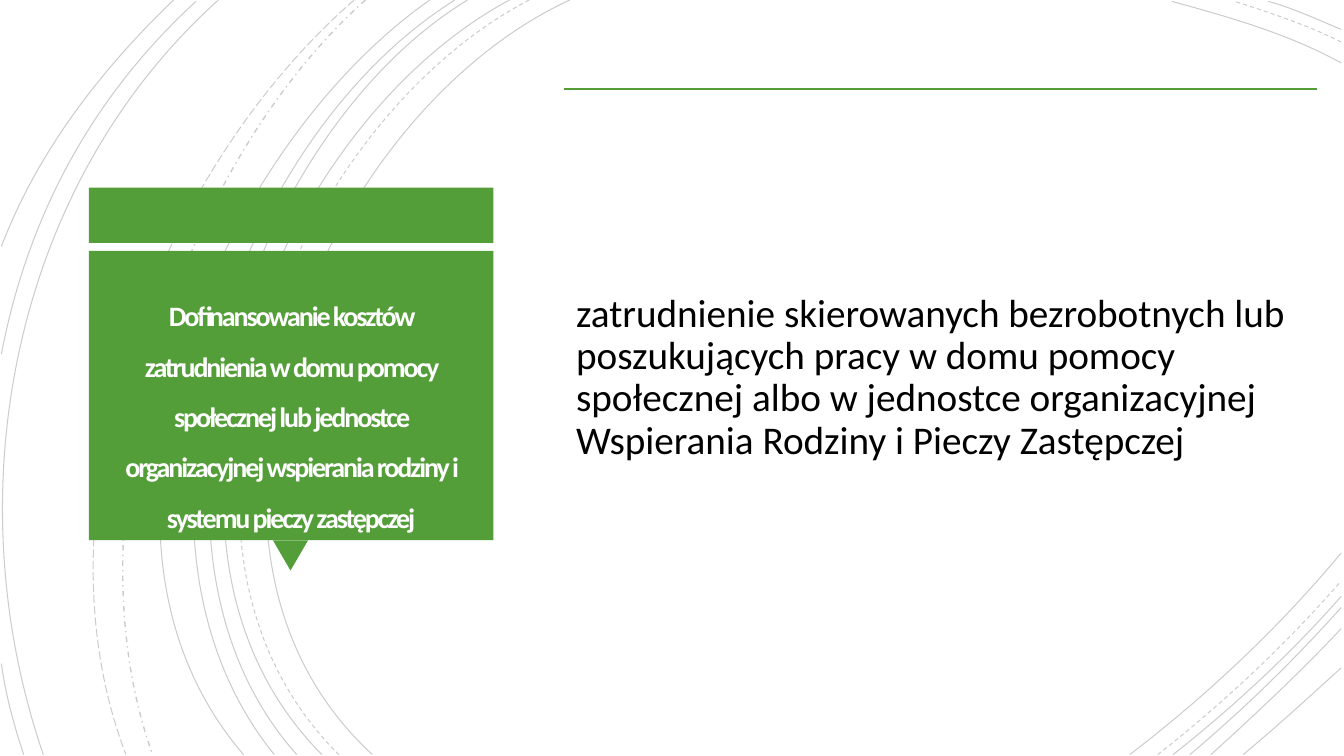
from lxml import etree
from pptx import Presentation
from pptx.dml.color import RGBColor
from pptx.enum import dml, shapes, text
from pptx.oxml.ns import qn
from pptx.util import Pt

HEX = {"green": "549E39", "white": "FFFEFF", "black": "000000"}
FONT = "Calibri"
TITLE = ("Dofinansowanie kosztów zatrudnienia w domu pomocy społecznej lub jednostce "
         "organizacyjnej wspierania rodziny i systemu pieczy zastępczej")
BODY = ("zatrudnienie skierowanych bezrobotnych lub poszukujących pracy w domu pomocy "
        "społecznej albo w jednostce organizacyjnej Wspierania Rodziny i Pieczy Zastępczej")

# Each arc: start, two control points, end
ARCS = {
    "SOLID": [
        [(407, 0), (227, 83), (103, 389), (266, 539)],
        [(364, 0), (194, 91), (79, 387), (230, 539)],
        [(334, 0), (176, 96), (79, 390), (212, 539)],
        [(325, 0), (166, 99), (70, 384), (196, 539)],
        [(307, 0), (156, 106), (38, 381), (174, 539)],
        [(156, 0), (8, 133), (-33, 353), (31, 539)],
        [(140, 1), (66, 69), (20, 154), (1, 253)],
        [(124, 0), (72, 50), (27, 108), (1, 176)],
        [(1, 474), (4, 496), (10, 518), (17, 539)],
        [(958, 45), (920, 24), (877, 12), (837, 1)],
        [(958, 21), (941, 14), (924, 6), (906, 1)],
        [(807, 539), (862, 497), (914, 448), (958, 395)],
        [(838, 539), (881, 505), (922, 467), (958, 426)],
        [(850, 539), (888, 507), (924, 472), (958, 434)],
        [(865, 539), (897, 510), (929, 480), (958, 449)],
        [(888, 539), (912, 519), (935, 498), (958, 477)],
    ],
    "DASH": [
        [(378, 0), (205, 90), (89, 387), (242, 539)],
        [(958, 30), (934, 18), (907, 9), (882, 1)],
        [(827, 539), (873, 503), (918, 461), (958, 415)],
    ],
    "DASH_DOT": [[(261, 0), (127, 120), (47, 366), (109, 539)]],
    "LONG_DASH": [[(253, 0), (113, 122), (21, 359), (90, 539)]],
}
WIDTH = {"DASH_DOT": 1}

BAND = (63.4, 134, 289, 39.5)
POINTER = (195, 386, 25, 21.5)
PANEL = (63.4, 179.3, 289, 206.6)
RULE = (403, 63.4, 941, 63.4)
COPY = (403, 63.4, 538.5, 413)


def color(name):
    return RGBColor.from_string(HEX[name])


def arc(slide, pts, dash):
    """Draw one faint cubic curve, turning the three segments into a Bézier."""
    pen = slide.shapes.build_freeform(*pts[0], scale=Pt(1))
    pen.add_line_segments(pts[1:], close=False)
    shape = pen.convert_to_shape()
    steps = list(shape.element.iter(qn("a:lnTo")))
    curve = etree.SubElement(steps[0].getparent(), qn("a:cubicBezTo"))
    for step in steps:
        curve.append(step[0])
        step.getparent().remove(step)
    shape.shadow.inherit = False
    shape.fill.background()
    shape.line.width = Pt(WIDTH.get(dash, 0.75))
    shape.line.color.rgb = color("black")
    shape.line.dash_style = getattr(dml.MSO_LINE, dash)
    tint = shape.element.find(".//" + qn("a:ln")).find(".//" + qn("a:srgbClr"))
    etree.SubElement(tint, qn("a:alpha"), val="20000")


def block(slide, kind, box):
    shape = slide.shapes.add_shape(kind, *map(Pt, box))
    shape.shadow.inherit = False
    shape.fill.solid()
    shape.fill.fore_color.rgb = color("green")
    shape.line.fill.background()
    return shape


def write(shape, words, ink, frame, para, font):
    tf = shape.text_frame
    para_1 = tf.paragraphs[0]
    run = para_1.add_run()
    run.text = words
    run.font.color.rgb = color(ink)
    for part, style in ((tf, frame), (para_1, para), (run.font, font)):
        for key, value in style.items():
            setattr(part, key, value)
    return run


def main():
    deck = Presentation()
    deck.slide_width, deck.slide_height = Pt(960), Pt(540)
    slide = deck.slides.add_slide(deck.slide_layouts[6])

    for dash, curves in ARCS.items():
        for pts in curves:
            arc(slide, pts, dash)

    kind = shapes.MSO_SHAPE
    block(slide, kind.RECTANGLE, BAND)
    block(slide, kind.ISOSCELES_TRIANGLE, POINTER).rotation = 180
    panel = block(slide, kind.RECTANGLE, PANEL)
    run = write(
        panel, TITLE, "white",
        dict(word_wrap=True, vertical_anchor=text.MSO_ANCHOR.BOTTOM, margin_left=Pt(24.5),
             margin_right=Pt(24.5), margin_top=0, margin_bottom=Pt(4.5)),
        dict(alignment=text.PP_ALIGN.CENTER, line_spacing=1.5),
        dict(name=FONT, size=Pt(20), bold=True))
    run.font._element.set("spc", "-150")

    rule = slide.shapes.add_connector(shapes.MSO_CONNECTOR.STRAIGHT, *map(Pt, RULE))
    rule.line.color.rgb = color("green")
    rule.line.width = Pt(1.25)
    etree.SubElement(rule.element.spPr, qn("a:effectLst"))

    inset = {f"margin_{side}": Pt(8.5) for side in ("left", "right", "top", "bottom")}
    write(
        slide.shapes.add_textbox(*map(Pt, COPY)), BODY, "black",
        dict(word_wrap=True, vertical_anchor=text.MSO_ANCHOR.MIDDLE, **inset),
        dict(alignment=text.PP_ALIGN.LEFT, line_spacing=0.9),
        dict(name=FONT, size=Pt(28)))

    deck.save("out.pptx")


if __name__ == "__main__":
    main()
